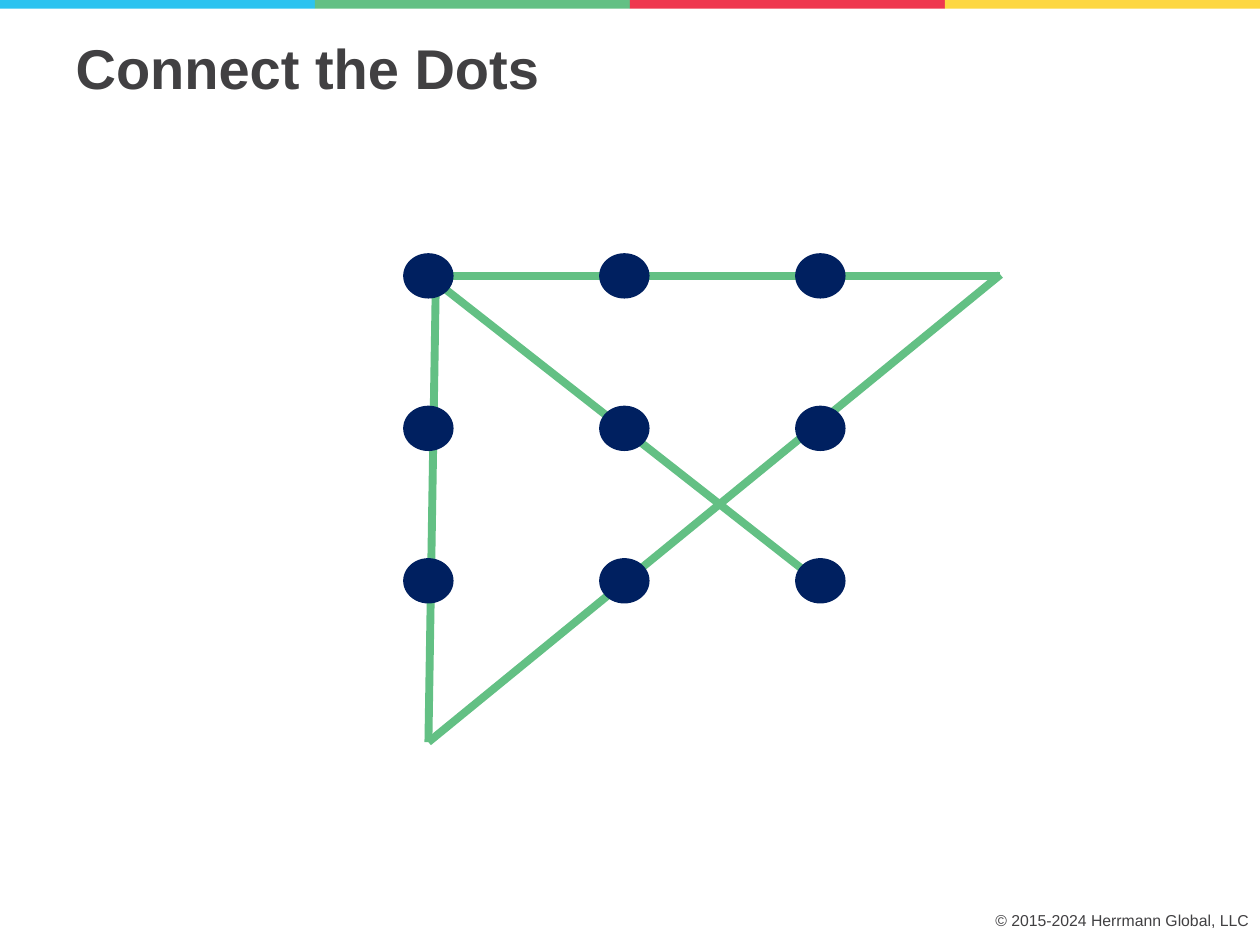
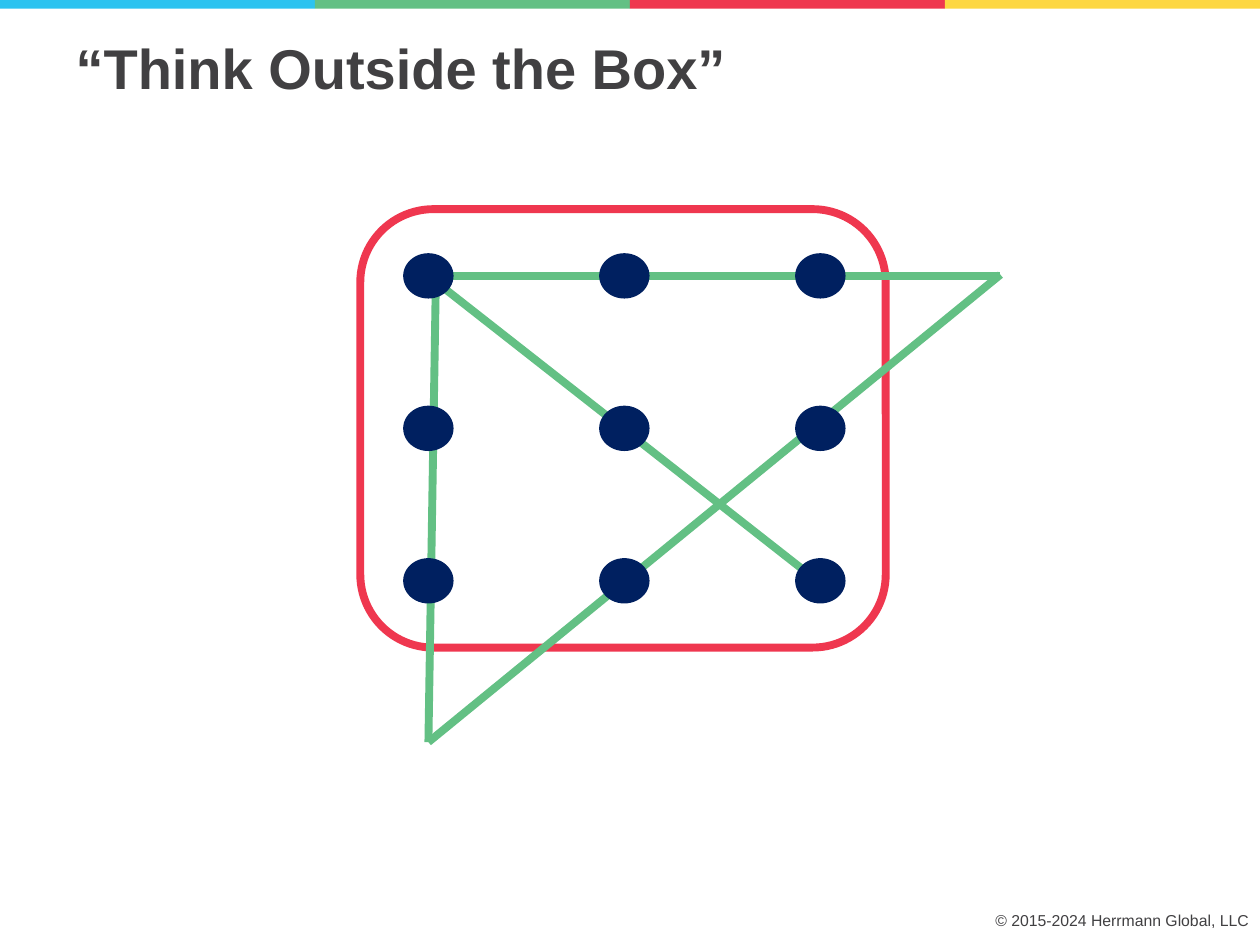
from dataclasses import dataclass
from itertools import product

from lxml.etree import SubElement
from pptx import Presentation
from pptx.dml.color import RGBColor
from pptx.enum.shapes import MSO_CONNECTOR, MSO_SHAPE
from pptx.enum.text import MSO_ANCHOR, MSO_AUTO_SIZE, PP_ALIGN
from pptx.oxml.ns import qn
from pptx.shapes.autoshape import Shape
from pptx.slide import Slide
from pptx.text.text import TextFrame
from pptx.util import Pt

BLUE = RGBColor(0x2C, 0xC3, 0xF0)
GREEN = RGBColor(0x63, 0xC0, 0x84)
RED = RGBColor(0xEF, 0x37, 0x4F)
YELLOW = RGBColor(0xFD, 0xD7, 0x42)
NAVY = RGBColor(0x00, 0x20, 0x60)
GRAY = RGBColor(0x41, 0x40, 0x42)

PAGE_WIDTH, PAGE_HEIGHT = 720, 540
BAND_HEIGHT = 5
STROKE_WIDTH = 4.5
TITLE_LAYOUT = 5

TITLE_FONT = {"name": "Arial", "size": Pt(32), "bold": True}
FOOTER_FONT = {"name": "Arial", "size": Pt(9), "bold": False}
TITLE_FRAME = {
    "margin_left": Pt(7.2), "margin_top": Pt(7), "margin_right": Pt(7.2),
    "margin_bottom": Pt(3.6), "word_wrap": True,
    "auto_size": MSO_AUTO_SIZE.NONE, "vertical_anchor": MSO_ANCHOR.TOP,
}
FOOTER_FRAME = {
    "margin_left": Pt(6.5), "margin_top": Pt(3.2), "margin_right": Pt(6.5),
    "margin_bottom": Pt(3.2), "word_wrap": True,
    "auto_size": MSO_AUTO_SIZE.SHAPE_TO_FIT_TEXT,
    "vertical_anchor": MSO_ANCHOR.TOP,
}


@dataclass(frozen=True)
class Area:
    left: float
    top: float
    width: float
    height: float

    def lengths(self) -> tuple[Pt, Pt, Pt, Pt]:
        return Pt(self.left), Pt(self.top), Pt(self.width), Pt(self.height)


@dataclass(frozen=True)
class Stroke:
    start_x: float
    start_y: float
    end_x: float
    end_y: float


@dataclass(frozen=True)
class PuzzlePage:
    title: str
    framed: bool


TITLE_AREA = Area(36, 12.24, 648, 66.96)
FOOTER_AREA = Area(547.92, 516.96, 172.08, 17.28)
FRAME_AREA = Area(205.92, 119.52, 300.24, 250.56)
FIRST_DOT = Area(230.4, 144.72, 28.8, 25.92)
DOT_STEP_X, DOT_STEP_Y = 112, 87.12
STROKES = (
    Stroke(478.08, 340.56, 244.8, 157.68),
    Stroke(571.68, 157.68, 244.8, 157.68),
    Stroke(571.68, 156.96, 244.8, 424.08),
    Stroke(249.12, 156.96, 244.8, 424.08),
)
PAGES = (
    PuzzlePage("Connect the Dots", False),
    PuzzlePage("“Think Outside the Box”", True),
)


def apply_format(target: object, values: dict) -> None:
    for name, value in values.items():
        setattr(target, name, value)


def write_text(frame: TextFrame, text: str, frame_format: dict,
               font_format: dict, alignment: PP_ALIGN) -> None:
    apply_format(frame, frame_format)
    paragraph = frame.paragraphs[0]
    paragraph.alignment = alignment
    span = paragraph.add_run()
    span.text = text
    apply_format(span.font, font_format)
    span.font.color.rgb = GRAY


def add_filled(page: Slide, kind: MSO_SHAPE, area: Area, color: RGBColor) -> Shape:
    shape = page.shapes.add_shape(kind, *area.lengths())
    shape.shadow.inherit = False
    shape.fill.solid()
    shape.fill.fore_color.rgb = color
    shape.line.fill.background()
    return shape


def add_band(page: Slide) -> None:
    colors = (BLUE, GREEN, RED, YELLOW)
    width = PAGE_WIDTH / len(colors)
    for index, color in enumerate(colors):
        area = Area(index * width, 0, width, BAND_HEIGHT)
        add_filled(page, MSO_SHAPE.RECTANGLE, area, color)


def add_footer(page: Slide) -> None:
    box = page.shapes.add_textbox(*FOOTER_AREA.lengths())
    write_text(box.text_frame, "© 2015-2024 Herrmann Global, LLC",
               FOOTER_FRAME, FOOTER_FONT, PP_ALIGN.RIGHT)


def add_title(page: Slide, text: str) -> None:
    title = page.shapes.title
    title.left, title.top, title.width, title.height = TITLE_AREA.lengths()
    write_text(title.text_frame, text, TITLE_FRAME, TITLE_FONT, PP_ALIGN.LEFT)


def add_frame(page: Slide) -> None:
    frame = page.shapes.add_shape(MSO_SHAPE.ROUNDED_RECTANGLE, *FRAME_AREA.lengths())
    frame.shadow.inherit = False
    frame.fill.background()
    frame.line.color.rgb = RED
    frame.line.width = Pt(STROKE_WIDTH)


def add_stroke(page: Slide, stroke: Stroke) -> None:
    connector = page.shapes.add_connector(
        MSO_CONNECTOR.STRAIGHT, Pt(stroke.start_x), Pt(stroke.start_y),
        Pt(stroke.end_x), Pt(stroke.end_y))
    connector.line.color.rgb = GREEN
    connector.line.width = Pt(STROKE_WIDTH)
    SubElement(connector._element.spPr, qn("a:effectLst"))


def add_dots(page: Slide) -> None:
    for row, column in product(range(3), repeat=2):
        area = Area(FIRST_DOT.left + column * DOT_STEP_X,
                    FIRST_DOT.top + row * DOT_STEP_Y,
                    FIRST_DOT.width, FIRST_DOT.height)
        add_filled(page, MSO_SHAPE.OVAL, area, NAVY)


def main() -> None:
    deck = Presentation()
    deck.slide_width, deck.slide_height = Pt(PAGE_WIDTH), Pt(PAGE_HEIGHT)
    for puzzle in PAGES:
        page = deck.slides.add_slide(deck.slide_layouts[TITLE_LAYOUT])
        add_band(page)
        add_footer(page)
        add_title(page, puzzle.title)
        if puzzle.framed:
            add_frame(page)
        for stroke in STROKES:
            add_stroke(page, stroke)
        add_dots(page)
    deck.save("out.pptx")


if __name__ == "__main__":
    main()
